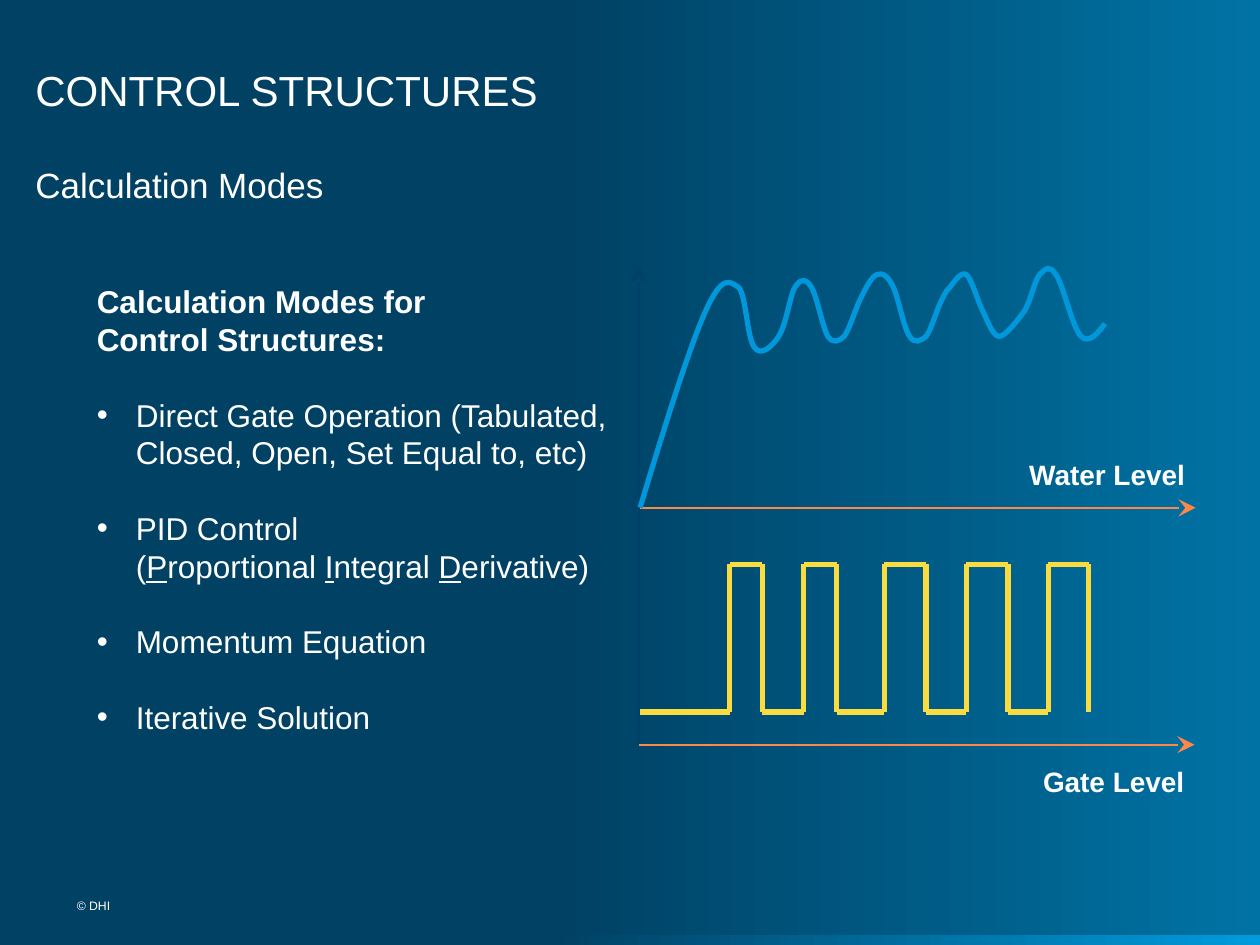
from itertools import pairwise
from lxml.etree import SubElement
from pptx import Presentation
from pptx.dml.color import RGBColor
from pptx.enum.shapes import MSO_CONNECTOR, MSO_SHAPE
from pptx.enum.text import MSO_ANCHOR, MSO_AUTO_SIZE, PP_ALIGN
from pptx.oxml.ns import qn
from pptx.util import Inches, Pt

WHITE = RGBColor(0xFF, 0xFF, 0xFF)
NAVY = RGBColor(0x00, 0x41, 0x64)
AXIS_NAVY = RGBColor(0x00, 0x41, 0x65)
TEAL = RGBColor(0x00, 0x73, 0xA4)
SKY = RGBColor(0x00, 0x9B, 0xDC)
WATER = RGBColor(0x00, 0x98, 0xDB)
ORANGE = RGBColor(0xFF, 0x88, 0x49)
YELLOW = RGBColor(0xFA, 0xDC, 0x41)

TITLE = "CONTROL STRUCTURES"
SUBTITLE = "Calculation Modes"
HEADING = "Calculation Modes for\vControl Structures:"
MODES = [
    "Direct Gate Operation (Tabulated, Closed, Open, Set Equal to, etc)",
    "PID Control\v(_P_roportional _I_ntegral _D_erivative)",
    "Momentum Equation",
    "Iterative Solution",
]
LABELS = [
    ("Water Level", (8.07, 3.58, 1.45, 0.37)),
    ("Gate Level", (8.18, 6.02, 1.33, 0.37)),
]
AXES = [
    ((5.07, 5.91), (5.07, 2.11), AXIS_NAVY),
    ((5.08, 4.03), (9.49, 4.03), ORANGE),
    ((5.07, 5.91), (9.48, 5.91), ORANGE),
]
PULSES = [(5.79, 6.05), (6.38, 6.64), (7.02, 7.35), (7.67, 8), (8.32, 8.64)]
GATE_START, GATE_CLOSED, GATE_OPEN = 5.08, 5.65, 4.48
WATER_START = (5.08, 4.03)
WATER_CURVES = [
    (5.27, 3.4, 5.47, 2.76, 5.6, 2.47), (5.73, 2.18, 5.79, 2.23, 5.86, 2.28),
    (5.92, 2.32, 5.93, 2.7, 5.99, 2.76), (6.04, 2.83, 6.13, 2.75, 6.18, 2.67),
    (6.24, 2.58, 6.27, 2.34, 6.31, 2.28), (6.35, 2.21, 6.4, 2.21, 6.44, 2.28),
    (6.48, 2.34, 6.53, 2.6, 6.57, 2.67), (6.61, 2.73, 6.66, 2.71, 6.7, 2.67),
    (6.74, 2.62, 6.79, 2.45, 6.83, 2.37), (6.87, 2.29, 6.92, 2.19, 6.96, 2.18),
    (7, 2.16, 7.05, 2.19, 7.09, 2.28), (7.13, 2.36, 7.17, 2.6, 7.22, 2.67),
    (7.26, 2.73, 7.3, 2.71, 7.35, 2.67), (7.39, 2.62, 7.44, 2.44, 7.48, 2.37),
    (7.51, 2.31, 7.51, 2.31, 7.54, 2.28), (7.57, 2.24, 7.63, 2.15, 7.67, 2.18),
    (7.71, 2.21, 7.76, 2.39, 7.8, 2.47), (7.84, 2.55, 7.88, 2.67, 7.93, 2.67),
    (7.98, 2.67, 8.07, 2.55, 8.13, 2.47), (8.18, 2.39, 8.21, 2.23, 8.25, 2.18),
    (8.3, 2.13, 8.33, 2.1, 8.38, 2.18), (8.44, 2.26, 8.51, 2.6, 8.58, 2.67),
    (8.64, 2.73, 8.71, 2.65, 8.77, 2.57),
]
LINE_PITCH = Pt(21.6)


def fade(fill, start, end):
    """Fill with a left-to-right gradient that begins at 44 percent."""
    fill.gradient()
    fill.gradient_angle = 0
    for stop, position, color in zip(fill.gradient_stops, (0.44, 1), (start, end)):
        stop.position = position
        stop.color.rgb = color


def style(para, size, bold=False):
    """Format every run of a paragraph."""
    for span in para.runs:
        span.font.name, span.font.size, span.font.bold = "Arial", Pt(size), bold
        span.font.color.rgb = WHITE


def write_block(box, area, text, size, anchor=MSO_ANCHOR.TOP):
    """Put one plain line of text in a box without insets."""
    box.left, box.top, box.width, box.height = map(Inches, area)
    frame = box.text_frame
    frame.text = text
    frame.word_wrap = True
    frame.auto_size = MSO_AUTO_SIZE.NONE
    frame.vertical_anchor = anchor
    frame.margin_left = frame.margin_right = frame.margin_top = frame.margin_bottom = 0
    para = frame.paragraphs[0]
    para.alignment = PP_ALIGN.LEFT
    para.space_before = Pt(0)
    style(para, size)
    return para


def set_indent(para, left, hanging, bullet=None):
    """Set the indents of a paragraph and its bullet."""
    properties = para._p.get_or_add_pPr()
    properties.set("marL", str(Inches(left)))
    properties.set("indent", str(Inches(hanging)))
    if bullet:
        SubElement(properties, qn("a:buFont"), typeface="Arial")
        SubElement(properties, qn("a:buChar"), char=bullet)
    else:
        SubElement(properties, qn("a:buNone"))


def add_mode(frame, text):
    """Add a bulleted mode whose underlined parts stand between underscores."""
    para = frame.add_paragraph()
    set_indent(para, 0.31, -0.31, "•")
    para.line_spacing = para.space_before = LINE_PITCH
    for row, line in enumerate(text.split("\v")):
        if row:
            para.add_line_break()
        for index, part in enumerate(line.split("_")):
            span = para.add_run()
            span.text = part
            span.font.underline = index % 2 == 1
    style(para, 18)


def add_line(shapes, start, end, color, width, arrow=False):
    """Draw a straight line, with an arrowhead at its end if asked."""
    line = shapes.add_connector(MSO_CONNECTOR.STRAIGHT, *map(Inches, start + end))
    line.line.color.rgb, line.line.width = color, Pt(width)
    SubElement(line._element.spPr, qn("a:effectLst"))
    if arrow:
        SubElement(line.line._get_or_add_ln(), qn("a:tailEnd"), type="stealth", w="lg", len="lg")


def add_curve(shapes, start, curves, color, width):
    """Draw an open chain of cubic curves, each two handles and an end point."""
    builder = shapes.build_freeform(*map(Inches, start))
    for curve in curves:
        values = [Inches(value) for value in curve]
        builder.add_line_segments(list(zip(values[::2], values[1::2])), close=False)
    shape = builder.convert_to_shape()
    outline = next(shape._element.iter(qn("a:path")))
    segments = outline.findall(qn("a:lnTo"))
    for first in range(0, len(segments), 3):
        cubic = SubElement(outline, qn("a:cubicBezTo"))
        for segment in segments[first:first + 3]:
            cubic.append(segment[0])
            outline.remove(segment)
    shape.shadow.inherit = False
    shape.fill.background()
    shape.line.color.rgb, shape.line.width = color, Pt(width)


def main():
    """Build the control structures slide."""
    deck = Presentation()
    deck.slide_width, deck.slide_height = Inches(10), Inches(7.5)
    page = deck.slides.add_slide(deck.slide_layouts[1])
    fade(page.background.fill, NAVY, TEAL)

    bar = page.shapes.add_shape(MSO_SHAPE.RECTANGLE, *map(Inches, (0, 7.42, 10, 0.08)))
    bar.shadow.inherit = False
    bar.line.fill.background()
    fade(bar.fill, NAVY, SKY)

    write_block(page.shapes.title, (0.28, 0.25, 8.6, 0.66), TITLE, 24, MSO_ANCHOR.BOTTOM)
    subtitle = write_block(page.placeholders[1], (0.28, 1.3, 9.45, 5.6), SUBTITLE, 20)
    set_indent(subtitle, 0, 0)

    modes = page.shapes.add_textbox(*map(Inches, (0.67, 2.19, 4.4, 4.34))).text_frame
    modes.word_wrap = True
    modes.text = HEADING
    modes.paragraphs[0].line_spacing = LINE_PITCH
    style(modes.paragraphs[0], 18, True)
    for mode in MODES:
        add_mode(modes, mode)

    for text, area in LABELS:
        label = page.shapes.add_textbox(*map(Inches, area)).text_frame
        label.word_wrap = False
        label.text = text
        style(label.paragraphs[0], 16, True)

    diagram = page.shapes.add_group_shape().shapes
    for start, end, color in AXES:
        add_line(diagram, start, end, color, 1, True)
    add_curve(diagram, WATER_START, WATER_CURVES, WATER, 3)

    gate = [(GATE_START, GATE_CLOSED)]
    for rise, fall in PULSES:
        gate += [(rise, GATE_CLOSED), (rise, GATE_OPEN), (fall, GATE_OPEN), (fall, GATE_CLOSED)]
    for start, end in pairwise(gate):
        add_line(diagram, start, end, YELLOW, 3)

    footer = page.shapes.add_textbox(0, 0, 0, 0)
    write_block(footer, (0.61, 7.13, 1.55, 0.19), "© DHI", 7)
    deck.save("out.pptx")


if __name__ == "__main__":
    main()
